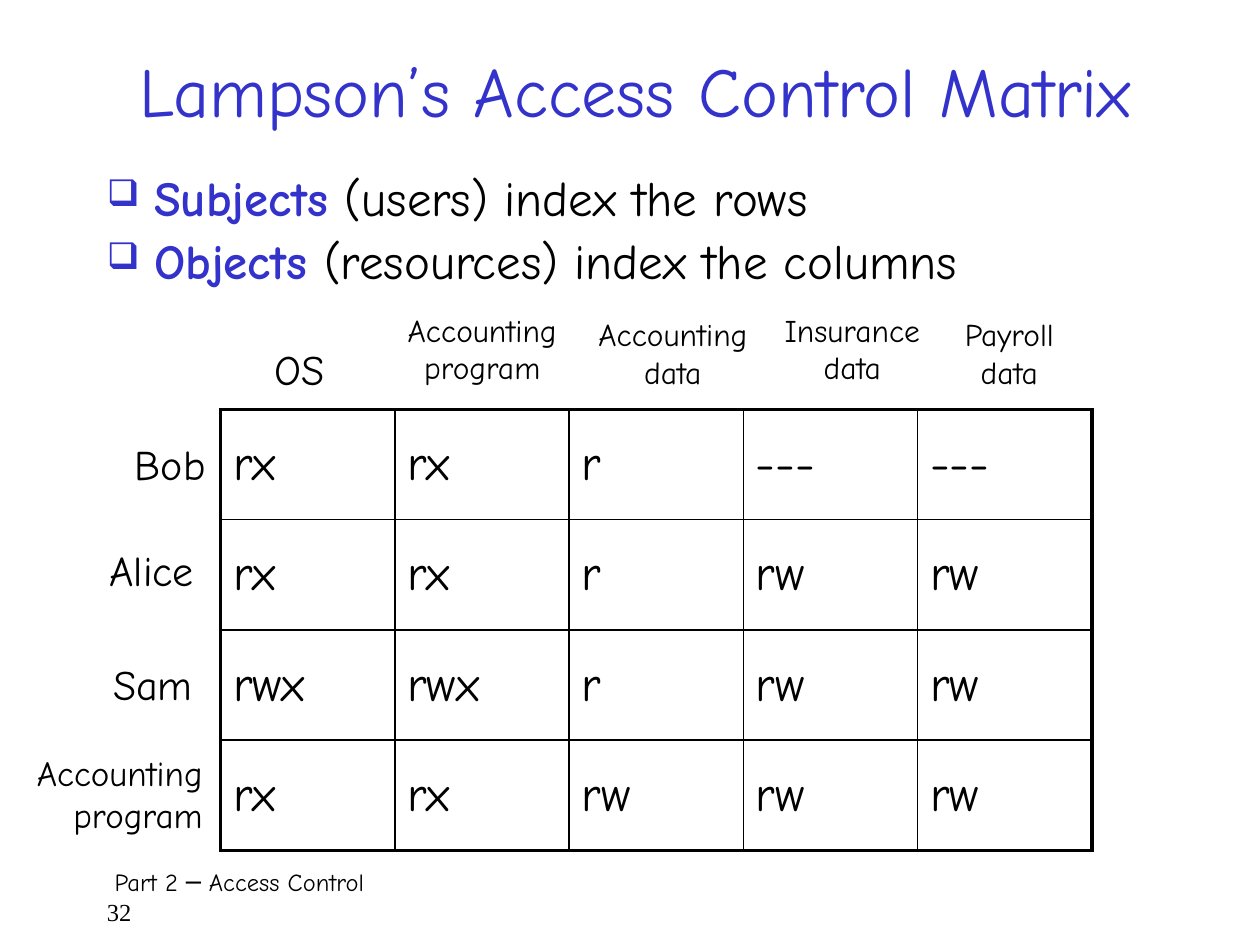
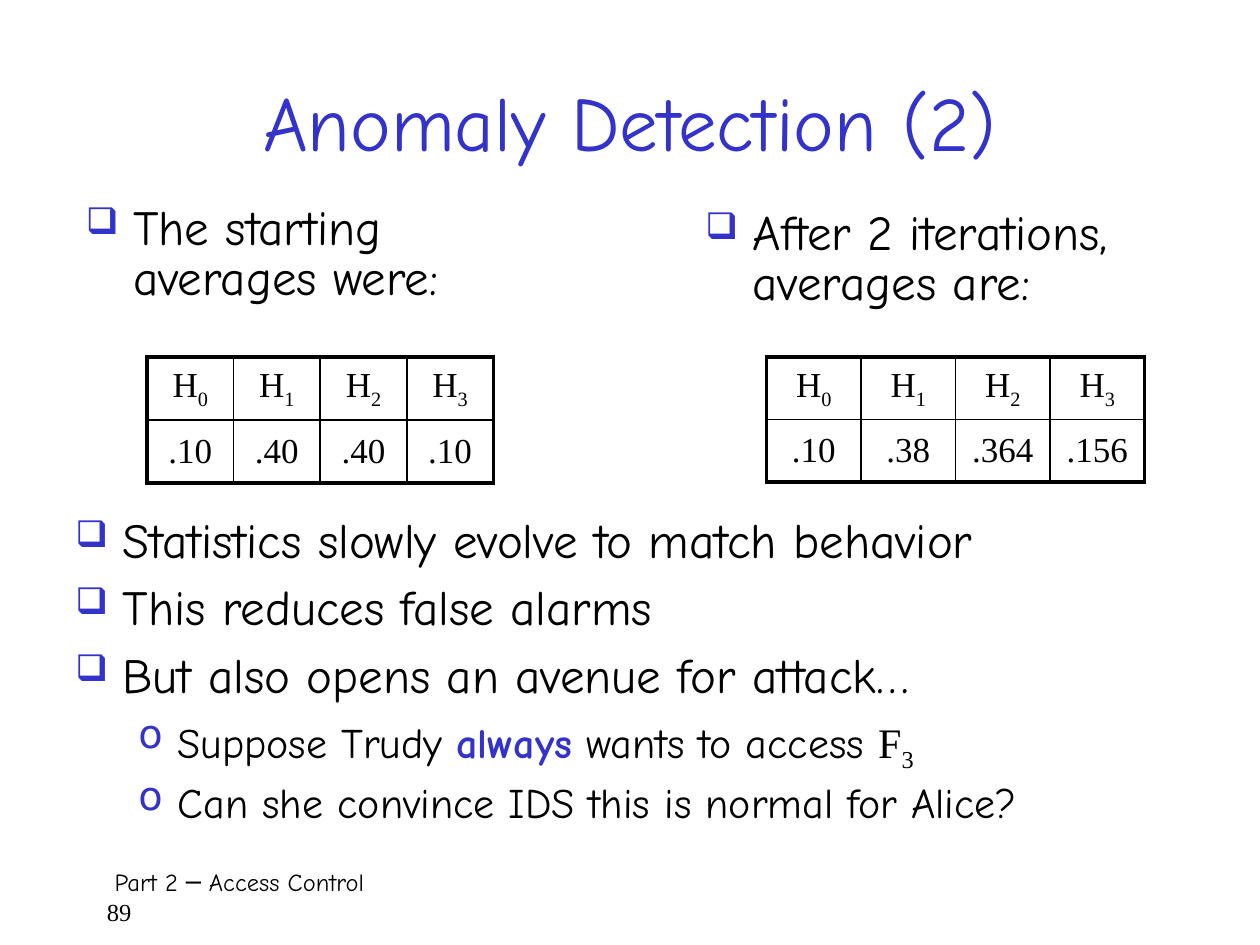
from dataclasses import dataclass

from lxml import etree
from pptx import Presentation
from pptx import util as u
from pptx.dml.color import RGBColor
from pptx.enum import text
from pptx.oxml import ns


@dataclass(frozen=True)
class Theme:
    ink: str = "000000"
    accent: str = "3333CC"
    hand: str = "Comic Neue"
    serif: str = "Times New Roman"
    body: int = 28
    sub_body: int = 24
    cell: int = 20
    column_label: int = 18
    footer: int = 14
    outer_line: float = 2.25
    inner_line: float = 1


theme = Theme()
LEFT, CENTER, RIGHT = text.PP_ALIGN.LEFT, text.PP_ALIGN.CENTER, text.PP_ALIGN.RIGHT
MIDDLE = text.MSO_ANCHOR.MIDDLE
# By outline level: character, size in percent, left margin, first-line indent, type size
BULLETS = [("❑", 75, 27, -27, theme.body), ("o", 95, 58.5, -22.5, theme.sub_body)]


def write(paragraph, runs, size, font=theme.hand, color=theme.ink, align=LEFT, level=None):
    """Fill a paragraph from a string or (text, style) runs; a level gives it a bullet."""
    paragraph.alignment = align
    if level is not None:
        character, percent, margin, indent, size = BULLETS[level]
        paragraph.level = level
        properties = paragraph._p.get_or_add_pPr()
        properties.set("marL", str(u.Pt(margin)))
        properties.set("indent", str(u.Pt(indent)))
        bullet_color = etree.SubElement(properties, ns.qn("a:buClr"))
        etree.SubElement(bullet_color, ns.qn("a:srgbClr"), val=theme.accent)
        etree.SubElement(properties, ns.qn("a:buSzPct"), val=str(percent * 1000))
        etree.SubElement(properties, ns.qn("a:buChar"), char=character)
        paragraph.space_before = u.Pt(0.2 * size)
    paragraph.font.size = u.Pt(size)
    paragraph.font.name = font
    paragraph.font.color.rgb = RGBColor.from_string(color)
    for content, style in [(runs, "")] if isinstance(runs, str) else runs:
        run = paragraph.add_run()
        run.text = content
        if style == "strong":
            run.font.bold = True
            run.font.color.rgb = RGBColor.from_string(theme.accent)
        if style in ("serif", "sub"):
            run.font.name = theme.serif
        if style == "sub":
            run._r.get_or_add_rPr().set("baseline", "-25000")


def add_frame(slide, box, wrap=True):
    """Add a text box at (left, top, width, height) in points and return its frame."""
    frame = slide.shapes.add_textbox(*map(u.Pt, box)).text_frame
    frame.word_wrap = wrap
    if not wrap:
        frame.auto_size = text.MSO_AUTO_SIZE.SHAPE_TO_FIT_TEXT
    return frame


presentation = Presentation()
presentation.slide_width, presentation.slide_height = u.Pt(720), u.Pt(540)

# Titles and footers
slides = []
for title, box, size, number in [
    ("Lampson’s Access Control Matrix", (24, 18, 678, 66), 40, "32"),
    ("Anomaly Detection (2)", (54, 24, 612, 90), 44, "89"),
]:
    slide = presentation.slides.add_slide(presentation.slide_layouts[6])
    slides.append(slide)
    frame = add_frame(slide, box)
    frame.vertical_anchor = MIDDLE
    write(frame.paragraphs[0], title, size, color=theme.accent, align=CENTER)
    footer = add_frame(slide, (54, 492, 618, 36))
    write(footer.paragraphs[0], "Part 2 ─ Access Control", theme.footer)
    footer.paragraphs[0]._p.get_or_add_pPr().set("marL", str(u.Pt(4.5)))
    write(footer.add_paragraph(), number, theme.footer, font=theme.serif)
matrix_slide, anomaly_slide = slides

# Bulleted text
for slide, box, line_spacing, space_after, bullets in [
    (matrix_slide, (54, 96, 630, 78), 0.9, 0, [
        (0, [("Subjects", "strong"), (" (users) index the rows", "")]),
        (0, [("Objects", "strong"), (" (resources) index the columns", "")]),
    ]),
    (anomaly_slide, (42, 114, 290, 78), 0.85, 0, [(0, "The starting averages were:")]),
    (anomaly_slide, (396, 116.5, 290, 70), 0.85, 0, [(0, "After 2 iterations, averages are:")]),
    (anomaly_slide, (36, 294, 654, 192), 0.8, 6, [
        (0, "Statistics slowly evolve to match behavior"),
        (0, "This reduces false alarms"),
        (0, "But also opens an avenue for attack…"),
        (1, [("Suppose Trudy ", ""), ("always", "strong"), (" wants to access ", ""),
             ("F", "serif"), ("3", "sub")]),
        (1, "Can she convince IDS this is normal for Alice?"),
    ]),
]:
    frame = add_frame(slide, box)
    for index, (level, runs) in enumerate(bullets):
        paragraph = frame.add_paragraph() if index else frame.paragraphs[0]
        write(paragraph, runs, theme.body, level=level)
        paragraph.line_spacing = line_spacing
        paragraph.space_after = u.Pt(space_after)

# Row and column labels of the access matrix
for lines, box, size, align in [
    (["OS"], (150, 193, 50, 41), theme.sub_body, LEFT),
    (["Accounting", "program"], (222, 174, 107, 58), theme.column_label, CENTER),
    (["Accounting", "data"], (331, 176.5, 107, 58), theme.column_label, CENTER),
    (["Insurance", "data"], (438, 174, 98, 58), theme.column_label, CENTER),
    (["Payroll", "data"], (541.5, 176.5, 70.5, 58), theme.column_label, CENTER),
    (["Bob"], (70, 247, 56, 41), theme.sub_body, LEFT),
    (["Alice"], (55.5, 307.5, 70.5, 41), theme.sub_body, LEFT),
    (["Sam"], (57.5, 373, 62, 41), theme.sub_body, LEFT),
    (["Accounting", "program"], (6, 426, 117, 63), theme.cell, RIGHT),
]:
    frame = add_frame(matrix_slide, box, wrap=False)
    for index, line in enumerate(lines):
        paragraph = frame.add_paragraph() if index else frame.paragraphs[0]
        write(paragraph, line, size, align=align)

# Tables
rights = ["rx rx r --- ---", "rx rx r rw rw", "rwx rwx r rw rw", "rx rx rw rw rw"]
averages_header = [[("H", ""), (str(index), "sub")] for index in range(4)]
for slide, box, size, font, align, rows in [
    (matrix_slide, (126, 234, 498, 252), theme.body, theme.hand, LEFT,
     [row.split() for row in rights]),
    (anomaly_slide, (84, 204, 198, 72), theme.cell, theme.serif, CENTER,
     [averages_header, [".10", ".40", ".40", ".10"]]),
    (anomaly_slide, (438, 204, 216, 71.5), theme.cell, theme.serif, CENTER,
     [averages_header, [".10", ".38", ".364", ".156"]]),
]:
    last_row, last_column = len(rows) - 1, len(rows[0]) - 1
    table = slide.shapes.add_table(len(rows), len(rows[0]), *map(u.Pt, box)).table
    table.first_row = table.horz_banding = False
    for row_index, row in enumerate(rows):
        for column_index, runs in enumerate(row):
            cell = table.cell(row_index, column_index)
            cell.vertical_anchor = MIDDLE
            paragraph = cell.text_frame.paragraphs[0]
            write(paragraph, runs, size, font=font, align=align)
            paragraph.space_before = u.Pt(0.2 * size)
            cell_properties = cell._tc.get_or_add_tcPr()
            for side, is_outer in [
                ("a:lnL", column_index == 0),
                ("a:lnR", column_index == last_column),
                ("a:lnT", row_index == 0),
                ("a:lnB", row_index == last_row),
            ]:
                width = theme.outer_line if is_outer else theme.inner_line
                border = etree.SubElement(cell_properties, ns.qn(side), w=str(u.Pt(width)))
                fill = etree.SubElement(border, ns.qn("a:solidFill"))
                etree.SubElement(fill, ns.qn("a:srgbClr"), val=theme.ink)
            cell.fill.background()

presentation.save("out.pptx")
